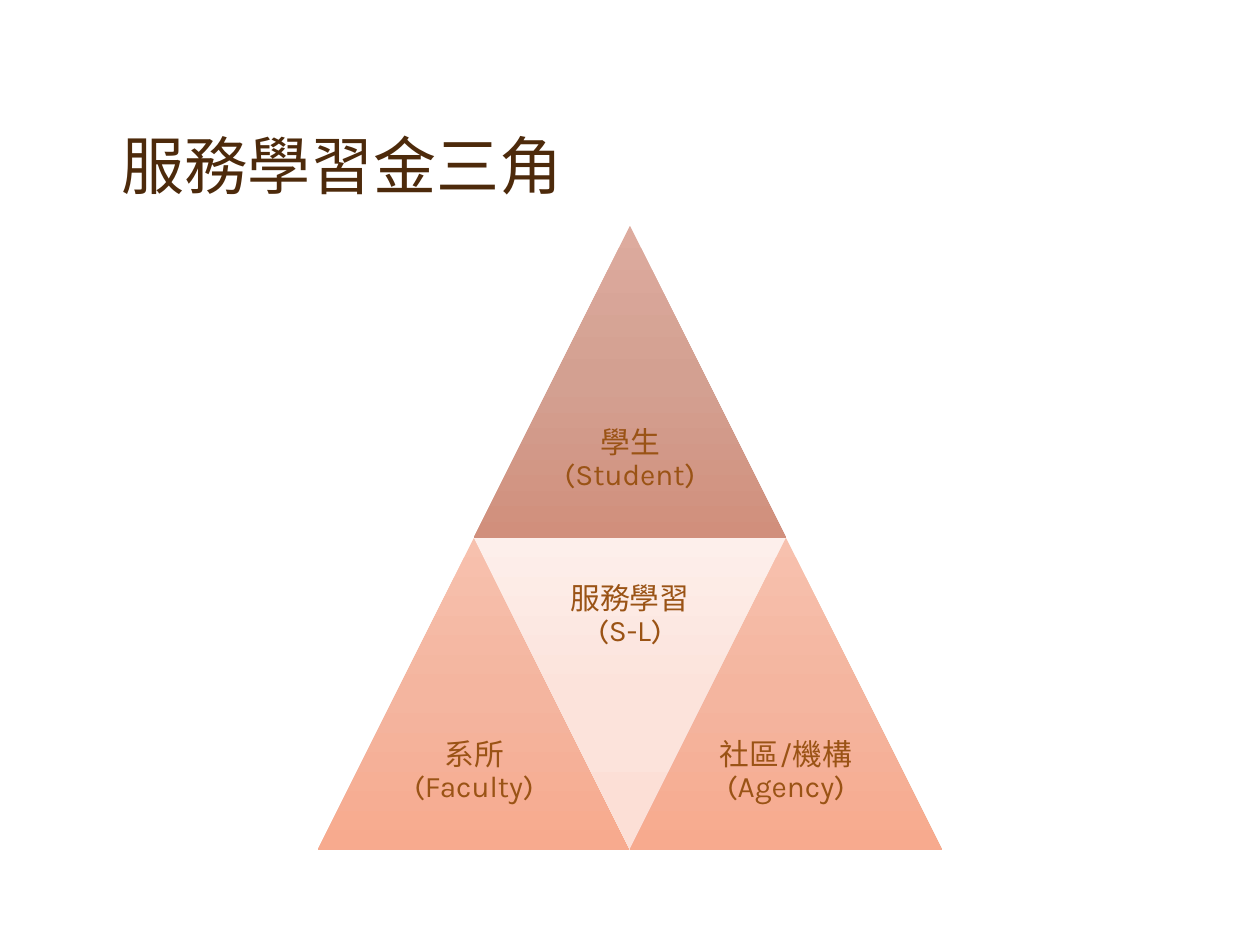
from copy import deepcopy

from pptx import Presentation
from pptx.dml.color import RGBColor
from pptx.enum import shapes, text
from pptx.util import Cm, Pt

CORAL = ("F7C1AE", "F4B59F", "F7AA8E")
ROSE = ("DDAB9E", "D3A091", "D18F7C")
BLUSH = ("FDEFEB", "FCE3DB", "FCDFD6")


def colour(value):
    """Return the colour of a hex string."""
    return RGBColor.from_string(value)


def fill_down(shape, shades):
    """Fill a shape from top to bottom with three shades, whatever its rotation."""
    shape.fill.gradient()
    shape.fill.gradient_angle = 270
    gradient = shape.fill._fill._gradFill
    gradient.set("rotWithShape", "0")
    first = gradient.gsLst[0]
    first.addnext(deepcopy(first))
    for stop, shade, position in zip(shape.fill.gradient_stops, shades, (0, 0.5, 1)):
        stop.color.rgb = colour(shade)
        stop.position = position


def add_label(slide, box, words, size, shade, anchor, align, inset):
    """Write one wrapped paragraph in a box of left, top, width and height in cm."""
    frame = slide.shapes.add_textbox(*map(Cm, box)).text_frame
    frame.word_wrap = True
    frame.vertical_anchor = anchor
    frame.margin_left = frame.margin_right = Cm(inset[0])
    frame.margin_top = frame.margin_bottom = Cm(inset[1])
    paragraph = frame.paragraphs[0]
    paragraph.text = words
    paragraph.alignment = align
    paragraph.line_spacing = 0.9
    paragraph.font.name = "Karla"
    paragraph.font.size = Pt(size)
    paragraph.font.color.rgb = colour(shade)


def add_title(slide, box):
    """Place the slide title at the foot of its box."""
    add_label(slide, box, "服務學習金三角", 36, "4D2A0B",
              text.MSO_ANCHOR.BOTTOM, text.PP_ALIGN.LEFT, (0.25, 0.13))


def add_golden_triangle(slide, left, top, side):
    """Stack four half-size triangles into one large triangle."""
    half = side / 2
    quarter = side / 4
    parts = (
        ("學生(Student)", 1, 0, ROSE, False),
        ("系所(Faculty)", 0, 1, CORAL, False),
        ("服務學習(S-L)", 1, 1, BLUSH, True),
        ("社區/機構(Agency)", 2, 1, CORAL, False),
    )
    for words, column, row, shades, inverted in parts:
        x, y = left + column * quarter, top + row * half
        triangle = slide.shapes.add_shape(
            shapes.MSO_SHAPE.ISOSCELES_TRIANGLE, Cm(x), Cm(y), Cm(half), Cm(half))
        triangle.shadow.inherit = False
        triangle.line.fill.background()
        triangle.rotation = 180 if inverted else 0
        fill_down(triangle, shades)
        label_top = y if inverted else y + quarter
        add_label(slide, (x + quarter / 2, label_top, quarter, quarter), words, 17,
                  "9A5315", text.MSO_ANCHOR.MIDDLE, text.PP_ALIGN.CENTER, (0.18, 0.18))


def main():
    """Build and save the slide."""
    deck = Presentation()
    deck.slide_width, deck.slide_height = Cm(25.4), Cm(19.05)
    slide = deck.slides.add_slide(deck.slide_layouts[6])
    add_golden_triangle(slide, left=6.41, top=4.55, side=12.58)
    add_title(slide, (2.21, 0.84, 20.96, 3.38))
    deck.save("out.pptx")


if __name__ == "__main__":
    main()
